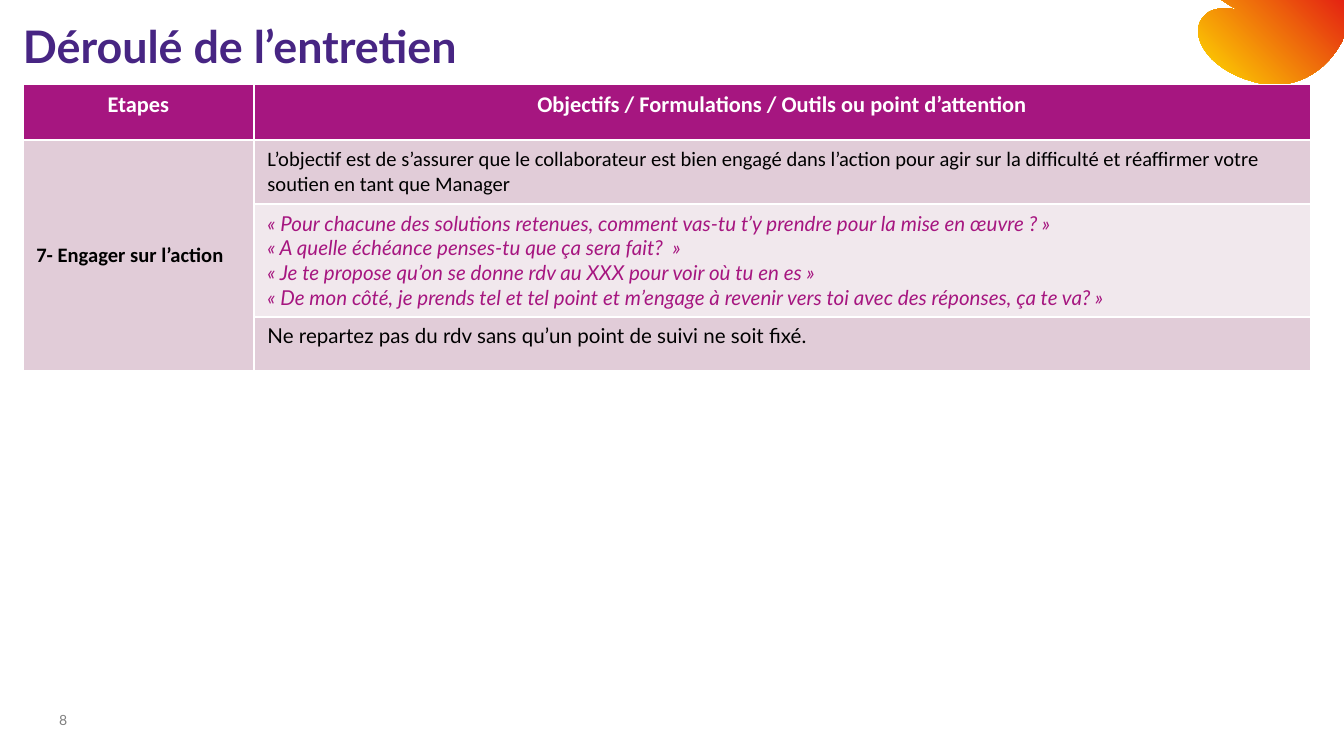
from dataclasses import dataclass

from pptx import Presentation
from pptx import util as u
from pptx.dml import color
from pptx.enum import text


@dataclass(frozen=True)
class Theme:
    heading: str = "Lato"
    body: str = "Calibri"
    purple: str = "472583"
    magenta: str = "A61680"
    band: str = "E1CCD8"
    pale: str = "F1E8ED"
    white: str = "FFFFFF"
    black: str = "000000"
    grey: str = "808080"
    yellow: str = "FFDD00"
    red: str = "E42312"
    title_size: float = 24
    header_size: float = 12
    cell_size: float = 11
    number_size: float = 7.5


theme = Theme()


def set_text(tf, lines, name, size, rgb, bold=False, italic=False, align=text.PP_ALIGN.LEFT):
    for i, line in enumerate(lines):
        p = tf.paragraphs[0] if i == 0 else tf.add_paragraph()
        p.add_run().text = line
        p.alignment = align
        p.font.name = name
        p.font.size = u.Pt(size)
        p.font.bold = bold
        p.font.italic = italic
        p.font.color.rgb = color.RGBColor.from_string(rgb)


prs = Presentation()
prs.slide_width = u.Inches(10)
prs.slide_height = u.Inches(10 * 9 / 16)
s = prs.slides.add_slide(prs.slide_layouts[5])

curves = [
    [(9.99, 0.3), (9.87, 0.54), (9.62, 0.69), (9.33, 0.61)],
    [(9.33, 0.61), (8.96, 0.51), (8.83, 0.23), (8.97, 0.11)],
    [(8.97, 0.11), (9.02, 0.06), (9.11, 0.05), (9.24, 0.08)],
    [(9.24, 0.08), (9.21, 0.07), (9.18, 0.06), (9.15, 0.04)],
]
steps = 16
outline = [(10, 0), (10, 0.26), (9.99, 0.3)]
for curve in curves:
    for step in range(1, steps + 1):
        t = step / steps
        weights = ((1 - t) ** 3, 3 * t * (1 - t) ** 2, 3 * t * t * (1 - t), t**3)
        outline.append([sum(w * pt[axis] for w, pt in zip(weights, curve)) for axis in (0, 1)])
builder = s.shapes.build_freeform(u.Inches(9.09), u.Inches(0))
builder.add_line_segments([(u.Inches(x), u.Inches(y)) for x, y in outline])
petal = builder.convert_to_shape()
petal.shadow.inherit = False
petal.line.fill.background()
petal.fill.gradient()
petal.fill.gradient_angle = 45
for stop, rgb in zip(petal.fill.gradient_stops, (theme.yellow, theme.red)):
    stop.color.rgb = color.RGBColor.from_string(rgb)

title = s.shapes.title
title.left, title.top = u.Inches(0.17), u.Inches(-0.11)
title.width, title.height = u.Inches(9.12), u.Inches(0.97)
number = s.shapes.add_textbox(u.Inches(0.44), u.Inches(5.32), u.Inches(0.59), u.Inches(0.1))
for sp, anchor in ((title, text.MSO_ANCHOR.MIDDLE), (number, text.MSO_ANCHOR.BOTTOM)):
    tf = sp.text_frame
    tf.margin_left = tf.margin_right = tf.margin_top = tf.margin_bottom = 0
    tf.word_wrap = True
    tf.auto_size = text.MSO_AUTO_SIZE.NONE
    tf.vertical_anchor = anchor
set_text(title.text_frame, ["Déroulé de l’entretien"], theme.heading, theme.title_size, theme.purple, bold=True)
title.text_frame.paragraphs[0].line_spacing = 0.8
set_text(number.text_frame, ["8"], theme.heading, theme.number_size, theme.grey)

widths = (1.72, 7.86)
heights = (0.41, 0.46, 0.84, 0.4)
table = s.shapes.add_table(
    len(heights), len(widths), u.Inches(0.17), u.Inches(0.63), u.Inches(sum(widths)), u.Inches(sum(heights))
).table
for column, width in zip(table.columns, widths):
    column.width = u.Inches(width)
for row, height in zip(table.rows, heights):
    row.height = u.Inches(height)

fills = (theme.magenta, theme.band, theme.pale, theme.band)
for i, fill in enumerate(fills):
    for j, cell in enumerate(table.rows[i].cells):
        cell.fill.solid()
        cell.fill.fore_color.rgb = color.RGBColor.from_string(theme.band if i and j == 0 else fill)

for j, label in enumerate(("Etapes", "Objectifs / Formulations / Outils ou point d’attention")):
    set_text(
        table.cell(0, j).text_frame, [label], theme.body, theme.header_size, theme.white,
        bold=True, align=text.PP_ALIGN.CENTER,
    )

stage = table.cell(1, 0)
stage.merge(table.cell(3, 0))
stage.vertical_anchor = text.MSO_ANCHOR.MIDDLE
set_text(stage.text_frame, ["7- Engager sur l’action"], theme.body, theme.cell_size, theme.black, bold=True)

objective = [
    "L’objectif est de s’assurer que le collaborateur est bien engagé dans l’action pour agir sur la difficulté "
    "et réaffirmer votre soutien en tant que Manager"
]
phrases = [
    "« Pour chacune des solutions retenues, comment vas-tu t’y prendre pour la mise en œuvre ? »",
    "« A quelle échéance penses-tu que ça sera fait?  »",
    "« Je te propose qu’on se donne rdv au XXX pour voir où tu en es »",
    "« De mon côté, je prends tel et tel point et m’engage à revenir vers toi avec des réponses, ça te va? »",
]
reminder = ["Ne repartez pas du rdv sans qu’un point de suivi ne soit fixé."]
details = (
    (objective, theme.body, theme.black, False),
    (phrases, theme.heading, theme.magenta, True),
    (reminder, theme.heading, theme.black, False),
)
for i, (lines, name, rgb, italic) in enumerate(details, start=1):
    set_text(table.cell(i, 1).text_frame, lines, name, theme.cell_size, rgb, italic=italic)

prs.save("out.pptx")
